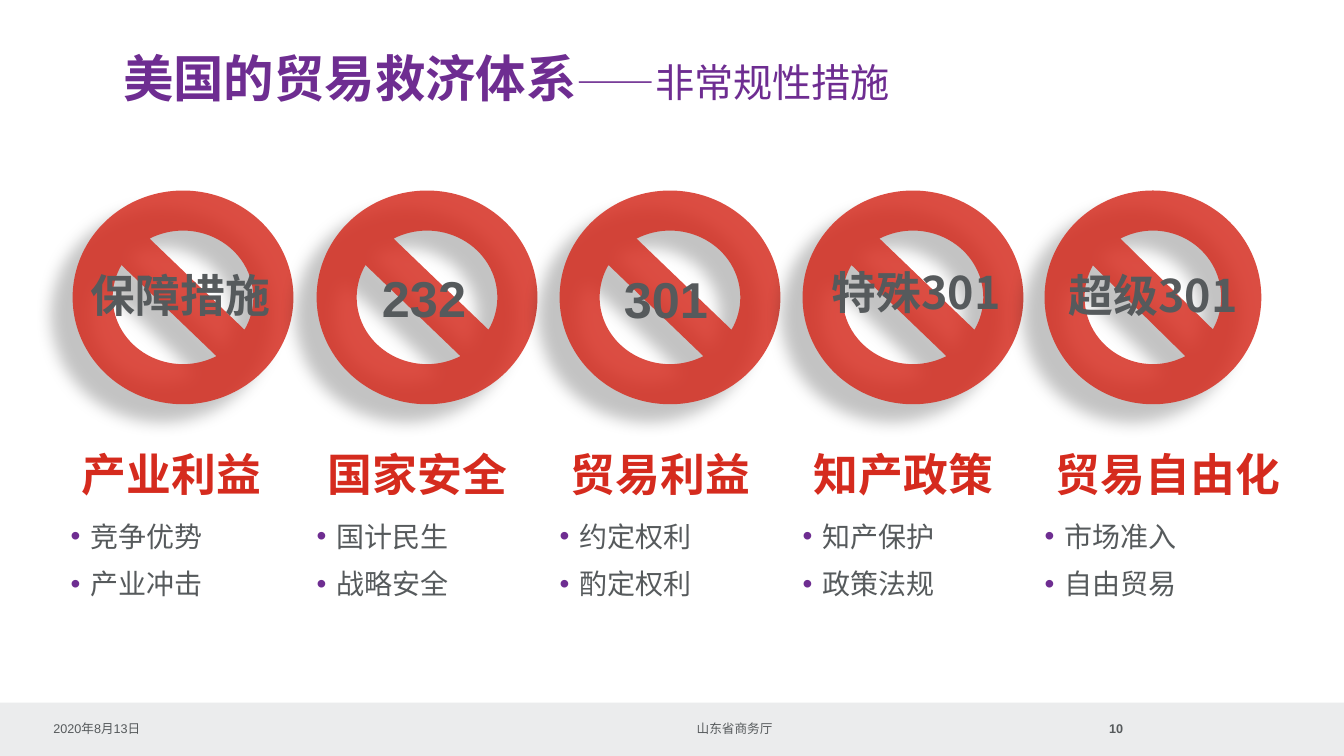
from dataclasses import dataclass

from lxml.etree import SubElement
from pptx import Presentation
from pptx.dml.color import RGBColor
from pptx.enum.shapes import MSO_SHAPE as Preset
from pptx.enum.text import MSO_ANCHOR as Anchor, MSO_AUTO_SIZE as AutoSize, PP_ALIGN as Align
from pptx.oxml.ns import qn
from pptx.slide import Slide
from pptx.util import Inches, Pt

COLORS = {"purple": "6E2D91", "red": "D52B1E", "gray": "565A5C",
          "band": "EBECED", "white": "FFFFFF", "black": "000000"}
CJK = "Noto Sans CJK SC"
MARGINS = ("margin_left", "margin_top", "margin_right", "margin_bottom")


@dataclass(frozen=True)
class Style:
    """Character format of a run."""
    size: float
    color: str
    bold: bool = False
    font: str = CJK
    outlined: bool = False


@dataclass(frozen=True)
class Box:
    """Position and size in inches."""
    left: float
    top: float
    width: float
    height: float

    def lengths(self) -> list:
        """Return the four lengths for a new shape."""
        return [Inches(value) for value in (self.left, self.top, self.width, self.height)]


@dataclass(frozen=True)
class Measure:
    """One trade measure with its sign, heading and points."""
    left: float
    label: str
    label_box: Box
    heading: str
    heading_width: float
    points: tuple
    sign_left: float
    sign_width: float = 2.19


TITLE = Style(36, "purple", True)
SUBTITLE = Style(28, "purple")
HEADING = Style(32, "red", True, outlined=True)
LABEL = Style(32, "gray", True, outlined=True)
NUMBER = Style(36, "gray", True, "Arial", True)
POINT = Style(20, "gray")
FOOTER = Style(9, "gray", font="Arial")
PAGE = Style(9, "gray", True, "Arial")

MEASURES = [
    Measure(0.7, "保障措施", Box(0.8, 2.61, 2.22, 0.64), "产业利益", 2, ("竞争优势", "产业冲击"), 0.72),
    Measure(3.14, "232", Box(3.69, 2.6, 1.17, 0.71), "国家安全", 2, ("国计民生", "战略安全"), 3.14),
    Measure(5.55, "301", Box(5.55 + 0.54, 2.61, 1.24, 0.71), "贸易利益", 2, ("约定权利", "酌定权利"), 5.55),
    Measure(7.96, "特殊301", Box(8.15, 2.58, 2.05, 0.64), "知产政策", 2, ("知产保护", "政策法规"), 7.96),
    Measure(10.36, "超级301", Box(10.5, 2.61, 2.11, 0.64), "贸易自由化", 2.45, ("市场准入", "自由贸易"), 10.36, 2.15),
]


def rgb(name: str) -> RGBColor:
    """Look up a colour by name."""
    return RGBColor.from_string(COLORS[name])


def add_color(parent, tag: str, name: str):
    """Append a colour element and return its value element."""
    return SubElement(SubElement(parent, qn(tag)), qn("a:srgbClr"), val=COLORS[name])


def add_run(paragraph, text: str, style: Style) -> None:
    """Append a formatted run."""
    run = paragraph.add_run()
    run.text = text
    properties = run._r.get_or_add_rPr()
    if style.outlined:
        line = SubElement(properties, qn("a:ln"), w=str(Pt(0.75)))
        add_color(line, "a:solidFill", "white")
    values = {"size": Pt(style.size), "bold": style.bold, "name": style.font}
    for name, value in values.items():
        setattr(run.font, name, value)
    run.font.color.rgb = rgb(style.color)
    SubElement(properties, qn("a:ea"), typeface=CJK)


def add_text(slide: Slide, box: Box, paragraphs: list, inset: bool = False,
             bullets: bool = False, align: Align = Align.LEFT, **frame_values):
    """Add a text box whose paragraphs are lists of text and style pairs."""
    frame = slide.shapes.add_textbox(*box.lengths()).text_frame
    values = {"word_wrap": True, "vertical_anchor": Anchor.TOP} | frame_values
    if not inset:
        values |= dict.fromkeys(MARGINS, 0)
    for name, value in values.items():
        setattr(frame, name, value)
    for index, runs in enumerate(paragraphs):
        paragraph = frame.add_paragraph() if index else frame.paragraphs[0]
        paragraph.alignment = align
        if bullets:
            add_bullet(paragraph)
        if index:
            paragraph.space_before = Pt(10)
        for text, style in runs:
            add_run(paragraph, text, style)


def add_bullet(paragraph) -> None:
    """Give a paragraph a purple bullet with a hanging indent."""
    properties = paragraph._p.get_or_add_pPr()
    properties.set("marL", str(Inches(0.2)))
    properties.set("indent", str(Inches(-0.2)))
    add_color(properties, "a:buClr", "purple")
    SubElement(properties, qn("a:buFont"), typeface="Arial")
    SubElement(properties, qn("a:buChar"), char="•")


def add_filled(slide: Slide, preset: Preset, box: Box, color: str):
    """Add a plain filled shape without a line."""
    shape = slide.shapes.add_shape(preset, *box.lengths())
    shape.shadow.inherit = False
    shape.fill.solid()
    shape.fill.fore_color.rgb = rgb(color)
    shape.line.fill.background()
    return shape


def add_sign(slide: Slide, box: Box) -> None:
    """Add a translucent prohibition sign with a soft shadow."""
    properties = add_filled(slide, Preset.NO_SYMBOL, box, "red")._element.spPr
    fill_color = properties.find(qn("a:solidFill")).find(qn("a:srgbClr"))
    SubElement(fill_color, qn("a:alpha"), val="84000")
    shadow = SubElement(properties.find(qn("a:effectLst")), qn("a:outerShdw"),
                        blurRad=str(Pt(11.8)), dist=str(Pt(19.7)),
                        dir=str(141 * 60000), algn="ctr", rotWithShape="0")
    shadow_color = SubElement(shadow, qn("a:srgbClr"), val=COLORS["black"])
    SubElement(shadow_color, qn("a:alpha"), val="28000")


def add_measure(slide: Slide, measure: Measure) -> None:
    """Draw one column of the slide."""
    add_sign(slide, Box(measure.sign_left, 1.89, measure.sign_width, 2.12))
    label_style = NUMBER if measure.label.isdigit() else LABEL
    add_text(slide, measure.label_box, [[(measure.label, label_style)]],
             inset=True, auto_size=AutoSize.SHAPE_TO_FIT_TEXT)
    add_text(slide, Box(measure.left, 4.38, measure.heading_width, 0.64),
             [[(measure.heading, HEADING)]], inset=True, align=Align.CENTER,
             word_wrap=False, auto_size=AutoSize.SHAPE_TO_FIT_TEXT)
    add_text(slide, Box(measure.left, 5.15, 1.65, 0.98),
             [[(point, POINT)] for point in measure.points], bullets=True)


def main() -> None:
    """Build and save the slide."""
    presentation = Presentation()
    presentation.slide_width, presentation.slide_height = Inches(13.33), Inches(7.5)
    slide = presentation.slides.add_slide(presentation.slide_layouts[6])
    add_filled(slide, Preset.RECTANGLE, Box(0, 6.97, 13.33, 0.53), "band")
    add_text(slide, Box(1.22, 0.47, 10.85, 0.58),
             [[("美国的贸易救济体系", TITLE), ("——非常规性措施", SUBTITLE)]])
    for left, text in ((0.53, "2020年8月13日"), (6.91, "山东省商务厅")):
        add_text(slide, Box(left, 7.15, 3.15, 0.16), [[(text, FOOTER)]],
                 vertical_anchor=Anchor.MIDDLE)
    add_text(slide, Box(10.93, 7.15, 0.21, 0.16), [[("10", PAGE)]], align=Align.RIGHT,
             vertical_anchor=Anchor.MIDDLE, word_wrap=False)
    for measure in MEASURES:
        add_measure(slide, measure)
    presentation.save("out.pptx")


if __name__ == "__main__":
    main()
